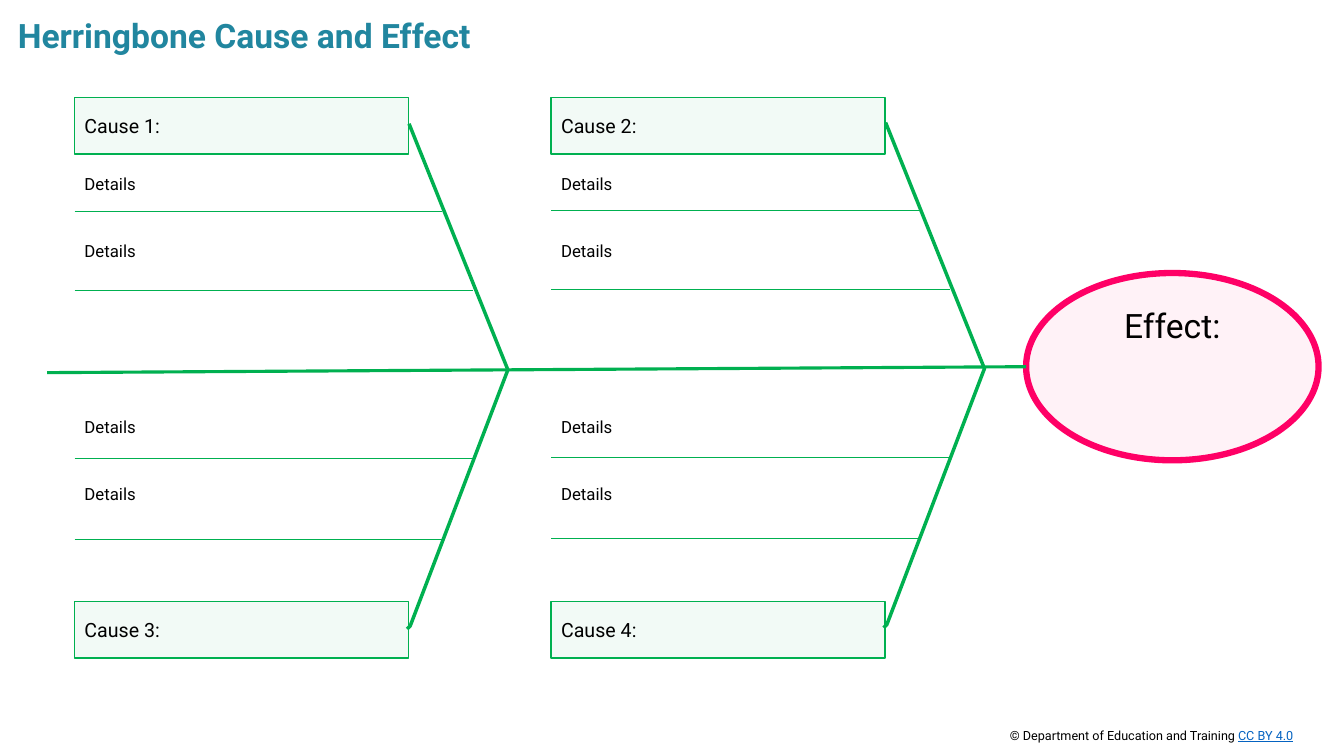
from pptx import Presentation, util as u
from pptx.dml.color import RGBColor
from pptx.enum import shapes, text
from pptx.oxml import ns, xmlchemy as xml

Cm, Pt = u.Cm, u.Pt
GREEN = RGBColor(0x00, 0xB0, 0x50)
PINK = RGBColor(0xFF, 0x00, 0x66)
TEAL = RGBColor(0x21, 0x86, 0x9F)
BLUE = RGBColor(0x05, 0x63, 0xC1)
BLACK = RGBColor(0, 0, 0)


def write(par, words, size, color=BLACK):
    run = par.add_run()
    run.text = words
    run.font.name = "Roboto"
    run.font.size = Pt(size)
    run.font.color.rgb = color
    return run


def label(slide, x, y, w, h, wrap=False):
    """Add an empty text box and return its paragraph."""
    frame = slide.shapes.add_textbox(Cm(x), Cm(y), Cm(w), Cm(h)).text_frame
    frame.word_wrap = wrap
    frame.auto_size = text.MSO_AUTO_SIZE.SHAPE_TO_FIT_TEXT
    return frame.paragraphs[0]


def panel(slide, kind, box, color, width):
    """Add a shape with a pale tint of its outline colour."""
    shape = slide.shapes.add_shape(kind, *[Cm(side) for side in box])
    shape.shadow.inherit = False
    shape.fill.solid()
    shape.fill.fore_color.rgb = color
    tint = shape.fill._xPr.find(ns.qn("a:solidFill"))[0]
    alpha = xml.OxmlElement("a:alpha")
    alpha.set("val", "5000")
    tint.append(alpha)
    shape.line.color.rgb = color
    shape.line.width = Pt(width)
    return shape.text_frame


def rule(slide, x1, y1, x2, y2, width):
    line = slide.shapes.add_connector(
        shapes.MSO_CONNECTOR.STRAIGHT, Cm(x1), Cm(y1), Cm(x2), Cm(y2))
    line.line.color.rgb = GREEN
    line.line.width = Pt(width)
    line._element.spPr.append(xml.OxmlElement("a:effectLst"))


def effect(slide, x, y, w, h):
    """Draw the spine and the effect at its head."""
    frame = panel(slide, shapes.MSO_SHAPE.OVAL, (x, y, w, h), PINK, 4.5)
    frame.vertical_anchor = text.MSO_ANCHOR.TOP
    par = frame.paragraphs[0]
    par.alignment = text.PP_ALIGN.CENTER
    write(par, "Effect:", 24)
    mid = y + h / 2
    rule(slide, x, mid, 1.19, mid + 0.15, 2.25)


def bone(slide, x, y):
    """Draw the bent line that joins two causes to the spine."""
    bends = [(8.43, 0.66), (10.92, 6.86), (8.46, 13.31), (8.38, 13.39)]
    dots = [(Cm(x + dx), Cm(y + dy)) for dx, dy in bends]
    maker = slide.shapes.build_freeform(*dots[0])
    maker.add_line_segments(dots[1:], close=False)
    shape = maker.convert_to_shape()
    shape.shadow.inherit = False
    shape.fill.background()
    shape.line.color.rgb = GREEN
    shape.line.width = Pt(2.5)


def causes(slide, x, y, names, lift):
    """Draw a pair of causes, one above the spine and one below."""
    for name, down in zip(names, (0, 12.7)):
        frame = panel(slide, shapes.MSO_SHAPE.RECTANGLE,
                      (x, y + down, 8.41, 1.42), GREEN, 1)
        frame.vertical_anchor = text.MSO_ANCHOR.MIDDLE
        par = frame.paragraphs[0]
        par.alignment = text.PP_ALIGN.LEFT
        write(par, name, 14)
    bone(slide, x, y - lift)
    for down, width in ((2.87, 9.27), (4.85, 10.05), (9.09, 10.05), (11.13, 9.27)):
        level = y + down - lift
        rule(slide, x, level, x + width, level, 0.5)
    for down in (1.8, 3.48, 7.92, 9.6):
        write(label(slide, x, y + down, 1.96, 0.76), "Details", 12)


def title(slide, x, y, w, h):
    par = label(slide, x, y, w, h)
    write(par, "Herringbone Cause and Effect", 24, TEAL).font.bold = True


def credit(slide, x, y, w, h):
    par = label(slide, x, y, w, h, True)
    write(par, "© Department of Education and Training ", 9)
    write(par, "CC BY 4.0", 9, BLUE).font.underline = True


def main():
    deck = Presentation()
    deck.slide_width, deck.slide_height = Cm(33.87), Cm(19.05)
    slide = deck.slides.add_slide(deck.slide_layouts[6])
    title(slide, 0.2, 0.25, 13.18, 1.27)
    credit(slide, 25.2, 18.21, 8.66, 0.64)
    effect(slide, 25.86, 6.88, 7.37, 4.72)
    causes(slide, 1.88, 2.46, ("Cause 1:", "Cause 3:"), 0)
    causes(slide, 13.89, 2.46, ("Cause 2:", "Cause 4:"), 0.03)
    deck.save("out.pptx")


if __name__ == "__main__":
    main()
